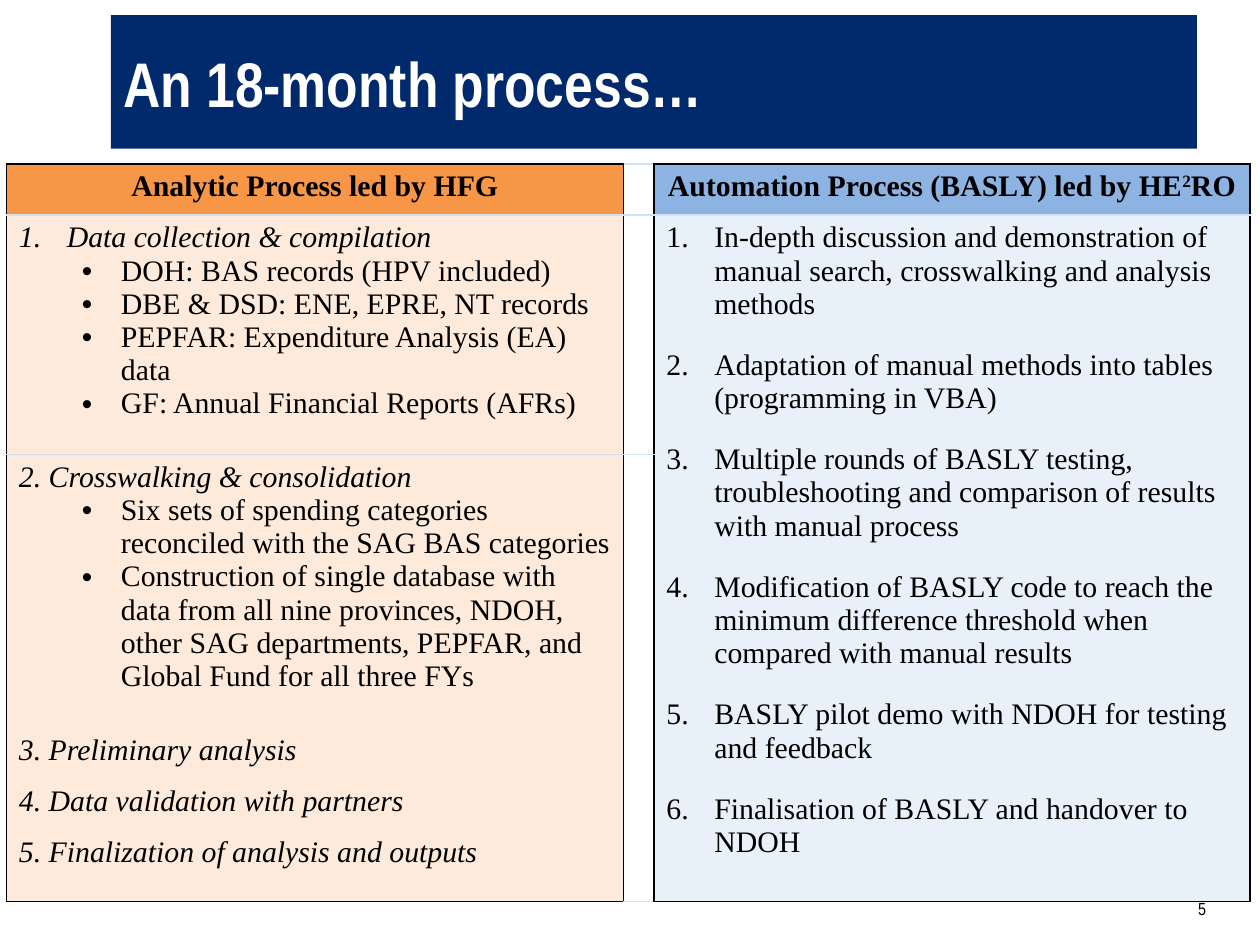
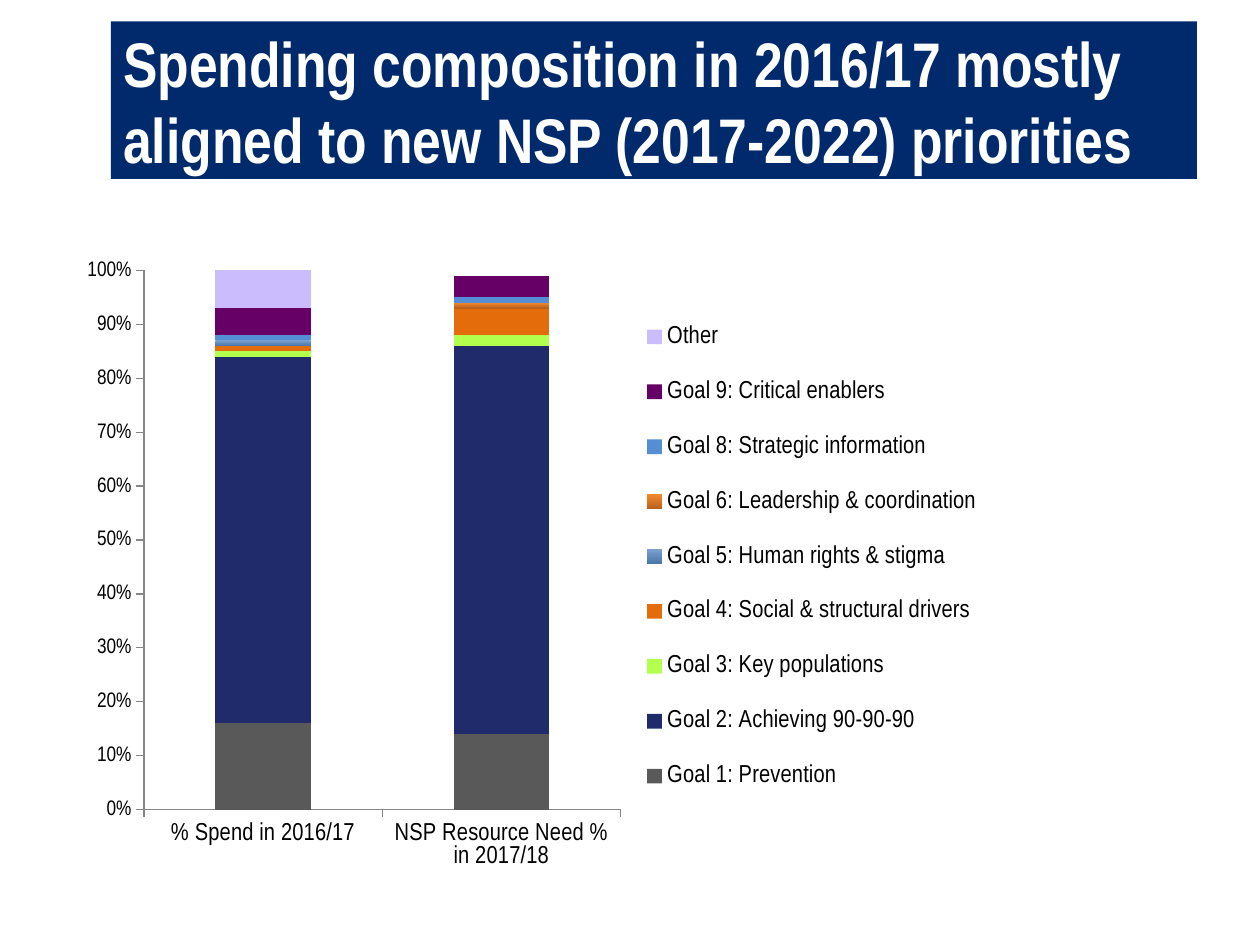
from dataclasses import dataclass

from lxml.etree import SubElement
from pptx import Presentation
from pptx.chart.data import CategoryChartData
from pptx.dml.color import RGBColor
from pptx.enum.chart import XL_CHART_TYPE as ChartType, XL_LEGEND_POSITION as LegendPosition
from pptx.enum.chart import XL_TICK_MARK as TickMark
from pptx.enum.shapes import MSO_SHAPE as ShapeKind
from pptx.enum.text import MSO_ANCHOR as Anchor, PP_ALIGN as Align
from pptx.oxml import parse_xml
from pptx.oxml.ns import nsdecls, qn
from pptx.util import Inches, Pt


@dataclass(frozen=True)
class Theme:
    heading_font: str = "Arial Narrow"
    body_font: str = "Times New Roman"
    navy: str = "002A6C"
    white: str = "FFFFFF"
    black: str = "000000"
    axis_gray: str = "868686"
    pale_line: str = "D1E0F3"
    orange: str = "F79646"
    pale_orange: str = "FDEADA"
    blue: str = "8DB3E2"
    pale_blue: str = "E8F0F9"
    title_size: int = 36
    body_size: int = 17
    label_size: int = 14
    tick_size: int = 12
    number_size: int = 10


@dataclass(frozen=True)
class Item:
    text: str
    kind: str = "plain"
    italic: bool = False
    after: int = 0


NO_STYLE = "{2D5ABB26-0587-4C30-8999-92F81FD0307C}"
LIST_STYLES = {
    "number": (0.38, -0.38, "a:buAutoNum", {"type": "arabicPeriod"}),
    "bullet": (0.81, -0.31, "a:buChar", {"char": "•"}),
}

COLUMNS = (4.9, 0.23, 4.73)
ROWS = (0.37, 1.9, 2.17, 0.37, 0.37, 0.57)

ANALYTIC_STEPS = (
    (
        Item("Data collection & compilation", "number", True),
        Item("DOH: BAS records (HPV included)", "bullet"),
        Item("DBE & DSD: ENE, EPRE, NT records", "bullet"),
        Item("PEPFAR: Expenditure Analysis (EA) data", "bullet"),
        Item("GF: Annual Financial Reports (AFRs)", "bullet"),
    ),
    (
        Item("2. Crosswalking & consolidation", italic=True),
        Item("Six sets of spending categories reconciled with the SAG BAS categories", "bullet"),
        Item("Construction of single database with data from all nine provinces, NDOH, "
             "other SAG departments, PEPFAR, and Global Fund for all three FYs", "bullet"),
    ),
    (Item("3. Preliminary analysis", italic=True),),
    (Item("4. Data validation with partners", italic=True),),
    (Item("5. Finalization of analysis and outputs", italic=True),),
)

AUTOMATION_STEPS = (
    "In-depth discussion and demonstration of manual search, crosswalking and analysis methods",
    "Adaptation of manual methods into tables (programming in VBA)",
    "Multiple rounds of BASLY testing, troubleshooting and comparison of results "
    "with manual process",
    "Modification of BASLY code to reach the minimum difference threshold when "
    "compared with manual results",
    "BASLY pilot demo with NDOH for testing and feedback",
    "Finalisation of BASLY and handover to NDOH",
)

SPENDING_CATEGORIES = ("% Spend in 2016/17", "NSP Resource Need % in 2017/18")
SPENDING_GOALS = (
    ("Goal 1: Prevention", (0.16, 0.14), ("595959",)),
    ("Goal 2: Achieving 90-90-90", (0.68, 0.72), ("202B6C",)),
    ("Goal 3: Key populations", (0.01, 0.02), ("B2FF4D",)),
    ("Goal 4: Social & structural drivers", (0.01, 0.05), ("E46C0A",)),
    ("Goal 5: Human rights & stigma", (0.01, 0), ("7BA0D0", "4A76A8")),
    ("Goal 6: Leadership & coordination", (0, 0.01), ("F58A2E", "B9601C")),
    ("Goal 8: Strategic information", (0.01, 0.01), ("558ED5",)),
    ("Goal 9: Critical enablers", (0.05, 0.04), ("660066",)),
    ("Other", (0.08, 0), ("CBBCFD",)),
)


class Deck:
    def __init__(self, theme):
        self.theme = theme
        self.presentation = Presentation()
        self.presentation.slide_width = Inches(10)
        self.presentation.slide_height = Inches(7.5)
        self.slide = None

    def new_slide(self, title, top, height):
        self.slide = self.presentation.slides.add_slide(self.presentation.slide_layouts[6])
        band = self.slide.shapes.add_shape(
            ShapeKind.RECTANGLE, Inches(0.88), Inches(top), Inches(8.62), Inches(height))
        band.shadow.inherit = False
        self.fill(band.fill, self.theme.navy)
        band.line.fill.background()
        frame = band.text_frame
        frame.word_wrap = True
        frame.vertical_anchor = Anchor.MIDDLE
        paragraph = frame.paragraphs[0]
        paragraph.alignment = Align.LEFT
        run = paragraph.add_run()
        run.text = title
        self.style(run.font, self.theme.title_size, self.theme.white, bold=True)

    def style(self, font, size, color=None, name=None, bold=False, italic=False):
        font.name = name or self.theme.heading_font
        font.size = Pt(size)
        font.bold = bold
        font.italic = italic
        font.color.rgb = RGBColor.from_string(color or self.theme.black)

    def fill(self, fill, color):
        fill.solid()
        fill.fore_color.rgb = RGBColor.from_string(color)

    def body_run(self, paragraph, text, bold=False, italic=False):
        run = paragraph.add_run()
        run.text = text
        self.style(run.font, self.theme.body_size, None, self.theme.body_font, bold, italic)
        return run

    def page_number(self, number):
        box = self.slide.shapes.add_textbox(Inches(7.17), Inches(7.08), Inches(2.5), Inches(0.25))
        box.text_frame.word_wrap = True
        paragraph = box.text_frame.paragraphs[0]
        paragraph.alignment = Align.RIGHT
        run = paragraph.add_run()
        run.text = str(number)
        self.style(run.font, self.theme.number_size)

    def table(self, left, top, columns, rows):
        frame = self.slide.shapes.add_table(
            len(rows), len(columns), Inches(left), Inches(top),
            Inches(sum(columns)), Inches(sum(rows)))
        table = frame.table
        table.first_row = table.horz_banding = False
        table._tbl.tblPr.find(qn("a:tableStyleId")).text = NO_STYLE
        for column, width in zip(table.columns, columns):
            column.width = Inches(width)
        for row, height in zip(table.rows, rows):
            row.height = Inches(height)
        return table

    def paint_cell(self, cell, color, top=None, bottom=None):
        properties = cell._tc.get_or_add_tcPr()
        black = self.theme.black
        for side, line_color in zip("LRTB", (black, black, top, bottom)):
            if line_color:
                line = SubElement(properties, qn(f"a:ln{side}"), w=str(Pt(1)))
                solid = SubElement(line, qn("a:solidFill"))
                SubElement(solid, qn("a:srgbClr"), val=line_color)
        self.fill(cell.fill, color)

    def cell_heading(self, cell, parts):
        paragraph = cell.text_frame.paragraphs[0]
        paragraph.alignment = Align.CENTER
        for text, baseline in parts:
            run = self.body_run(paragraph, text, bold=True)
            if baseline:
                run.font._element.set("baseline", str(baseline * 1000))

    def cell_items(self, cell, items):
        frame = cell.text_frame
        for index, item in enumerate(items):
            paragraph = frame.paragraphs[0] if index == 0 else frame.add_paragraph()
            if item.kind in LIST_STYLES:
                margin, indent, tag, attributes = LIST_STYLES[item.kind]
                properties = paragraph._p.get_or_add_pPr()
                properties.set("marL", str(Inches(margin)))
                properties.set("indent", str(Inches(indent)))
                if item.kind == "bullet":
                    SubElement(properties, qn("a:buFont"), typeface="Arial")
                SubElement(properties, qn(tag), attributes)
            if item.after:
                paragraph.space_after = Pt(item.after)
            self.body_run(paragraph, item.text, italic=item.italic)

    def place_part(self, element, position, box, inner=False):
        for layout in element.findall(qn("c:layout")):
            element.remove(layout)
        target = '<c:layoutTarget val="inner"/>' if inner else ""
        modes = "".join(f'<c:{axis}Mode val="edge"/>' for axis in "xy")
        sizes = "".join(f'<c:{key} val="{value}"/>' for key, value in zip("xywh", box))
        element.insert(position, parse_xml(
            f'<c:layout {nsdecls("c")}><c:manualLayout>{target}{modes}{sizes}'
            '</c:manualLayout></c:layout>'))

    def style_axis(self, axis, size):
        axis.has_major_gridlines = False
        axis.major_tick_mark = TickMark.OUTSIDE
        axis.minor_tick_mark = TickMark.NONE
        axis.format.line.color.rgb = RGBColor.from_string(self.theme.axis_gray)
        axis.format.line.width = Pt(0.75)
        self.style(axis.tick_labels.font, size)

    def stacked_chart(self, left, top, width, height, categories, goals):
        data = CategoryChartData(number_format="0%")
        data.categories = categories
        for name, values, _ in goals:
            data.add_series(name, values)
        chart = self.slide.shapes.add_chart(
            ChartType.COLUMN_STACKED, Inches(left), Inches(top),
            Inches(width), Inches(height), data).chart
        chart.has_title = False
        self.style(chart.font, self.theme.number_size)

        plot = chart.plots[0]
        plot.gap_width = 150
        plot.overlap = 100
        plot.vary_by_categories = False
        for series, (_, _, colors) in zip(plot.series, goals):
            fill = series.format.fill
            if len(colors) == 1:
                self.fill(fill, colors[0])
            else:
                fill.gradient()
                fill.gradient_angle = 270
                for stop, color in zip(fill.gradient_stops, colors):
                    stop.color.rgb = RGBColor.from_string(color)

        self.style_axis(chart.category_axis, self.theme.label_size)
        value_axis = chart.value_axis
        self.style_axis(value_axis, self.theme.tick_size)
        value_axis.minimum_scale = 0
        value_axis.maximum_scale = 1
        value_axis.major_unit = 0.1
        value_axis.tick_labels.number_format = "0%"
        value_axis.tick_labels.number_format_is_linked = False

        chart.has_legend = True
        chart.legend.position = LegendPosition.RIGHT
        chart.legend.include_in_layout = False
        self.style(chart.legend.font, self.theme.label_size)
        plot_area = chart._chartSpace.chart.plotArea
        self.place_part(plot_area, 0, (0.095, 0.044, 0.512, 0.831), inner=True)
        self.place_part(chart.legend._element, 1, (0.63, 0.08, 0.37, 0.81))


def build_process_slide(deck):
    theme = deck.theme
    deck.new_slide("An 18-month process…", 0.12, 1.06)
    table = deck.table(0.05, 1.3, COLUMNS, ROWS)
    last_row = len(ROWS) - 1
    table.cell(1, 2).merge(table.cell(last_row, 2))

    header_colors = (theme.orange, theme.white, theme.blue)
    body_colors = (theme.pale_orange, theme.white, theme.pale_blue)
    for column in range(len(COLUMNS)):
        outer = theme.pale_line if column == 1 else theme.black
        deck.paint_cell(table.cell(0, column), header_colors[column], outer, theme.pale_line)
        for row in range(1, len(ROWS)):
            closes = row == last_row or (column == 2 and row == 1)
            deck.paint_cell(table.cell(row, column), body_colors[column],
                            theme.pale_line if row == 1 else None,
                            outer if closes else None)

    deck.cell_heading(table.cell(0, 0), [("Analytic Process led by HFG", 0)])
    deck.cell_heading(table.cell(0, 2), [
        ("Automation Process (BASLY) led by HE", 0), ("2", 30), ("RO", 0)])
    for row, items in enumerate(ANALYTIC_STEPS, start=1):
        deck.cell_items(table.cell(row, 0), items)
    deck.cell_items(table.cell(1, 2), [Item(text, "number", after=16) for text in AUTOMATION_STEPS])
    deck.page_number(5)


def build_spending_slide(deck):
    deck.new_slide(
        "Spending composition in 2016/17 mostly aligned to new NSP (2017-2022) priorities",
        0.17, 1.25)
    deck.stacked_chart(0.44, 1.92, 7.39, 5.15, SPENDING_CATEGORIES, SPENDING_GOALS)


def main():
    deck = Deck(Theme())
    build_process_slide(deck)
    build_spending_slide(deck)
    deck.presentation.save("out.pptx")


if __name__ == "__main__":
    main()
